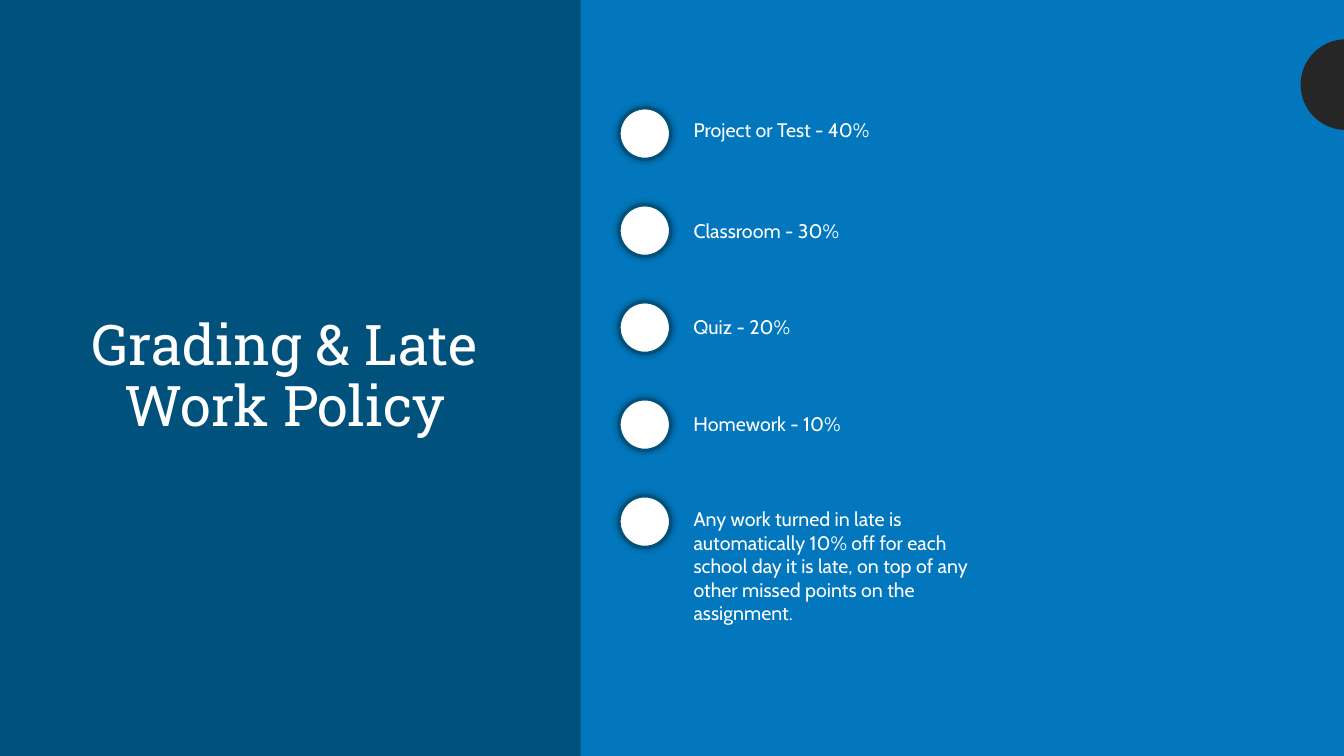
"""Build the grading and late work policy slide."""
from dataclasses import dataclass
from math import cos, pi, sin

from lxml import etree
from pptx import Presentation
from pptx.dml.color import RGBColor
from pptx.enum.shapes import MSO_SHAPE
from pptx.enum.text import MSO_ANCHOR, PP_ALIGN
from pptx.oxml.ns import qn
from pptx.util import Inches, Pt

RECT, OVAL = MSO_SHAPE.RECTANGLE, MSO_SHAPE.OVAL
TOP, MIDDLE = MSO_ANCHOR.TOP, MSO_ANCHOR.MIDDLE
LEFT, CENTER = PP_ALIGN.LEFT, PP_ALIGN.CENTER


@dataclass(frozen=True)
class Theme:
    navy: RGBColor = RGBColor.from_string("00517C")
    blue: RGBColor = RGBColor.from_string("0277BD")
    dark: RGBColor = RGBColor.from_string("262626")
    white: RGBColor = RGBColor.from_string("FFFFFF")
    title_font: str = "Roboto Slab"
    body_font: str = "Cabin"
    title_size: int = 40
    body_size: int = 14


THEME = Theme()
LATE_RULE = (
    "Any work turned in late is automatically 10% off for each school day "
    "it is late, on top of any other missed points on the assignment."
)
# Each row: text, offset of its box below the bullet's top, width, height
POLICIES = [
    ("Project or Test - 40%", 0, 4.48, 0.44),
    ("Classroom - 30%", 0.04, 4.19, 0.44),
    ("Quiz - 20%", 0.03, 4.43, 0.44),
    ("Homework - 10%", 0.03, 4.43, 0.44),
    (LATE_RULE, 0.01, 3.28, 1.38),
]


def set_attrs(obj, values):
    """Set each attribute of obj from a dict."""
    for name, value in values.items():
        setattr(obj, name, value)


def paint(sp, color):
    """Give a shape a plain fill without line or shadow."""
    sp.shadow.inherit = False
    sp.fill.solid()
    sp.fill.fore_color.rgb = color
    sp.line.fill.background()


def add_glow_shadow(sp):
    """Add a soft black shadow centred under a shape."""
    effects = sp._element.spPr.find(qn("a:effectLst"))
    shadow = etree.SubElement(effects, qn("a:outerShdw"), blurRad=str(Pt(5)),
                              dist="0", dir="0", algn="ctr", rotWithShape="0")
    color = etree.SubElement(shadow, qn("a:srgbClr"), val="000000")
    etree.SubElement(color, qn("a:alpha"), val="40000")


def add_text(slide, box, text, font, frame, para):
    """Add one wrapped paragraph in a text box."""
    tf = slide.shapes.add_textbox(*map(Inches, box)).text_frame
    set_attrs(tf, {"word_wrap": True, **frame})
    p = tf.paragraphs[0]
    set_attrs(p, para)
    r = p.add_run()
    r.text = text
    set_attrs(r.font, font)
    r.font.color.rgb = THEME.white


def add_backdrop(slide, box):
    """Fill the background and the blue panel in the given box."""
    slide.background.fill.solid()
    slide.background.fill.fore_color.rgb = THEME.navy
    paint(slide.shapes.add_shape(RECT, *map(Inches, box)), THEME.blue)


def add_half_disc(slide, box, steps=48):
    """Draw the left half of a disc that fills the box."""
    left, top, radius, height = box
    cx, cy = left + radius, top + height / 2
    angles = [pi / 2 + pi * i / steps for i in range(steps + 1)]
    points = [(Inches(cx + radius * cos(a)), Inches(cy + radius * sin(a)))
              for a in angles]
    builder = slide.shapes.build_freeform(*points[0])
    builder.add_line_segments(points[1:], close=True)
    paint(builder.convert_to_shape(), THEME.dark)


def add_title(slide, box, text):
    """Place the slide title centred in the box."""
    font = {"name": THEME.title_font, "size": Pt(THEME.title_size)}
    add_text(slide, box, text, font, {"vertical_anchor": MIDDLE},
             {"alignment": CENTER, "line_spacing": 0.9})


def add_policies(slide, box, rows, size=0.51, indent=0.64):
    """List the policies with round bullets spread over the box height."""
    left, top, _, height = box
    pitch = (height - size) / (len(rows) - 1)
    font = {"name": THEME.body_font, "size": Pt(THEME.body_size)}
    margins = ("margin_left", "margin_top", "margin_right", "margin_bottom")
    frame = {"vertical_anchor": TOP, **dict.fromkeys(margins, Inches(0.1))}
    for i, (text, offset, width, text_height) in enumerate(rows):
        y = top + i * pitch
        sp = slide.shapes.add_shape(OVAL, *map(Inches, (left, y, size, size)))
        paint(sp, THEME.white)
        sp.line.color.rgb = THEME.navy
        sp.line.width = Pt(2.25)
        add_glow_shadow(sp)
        add_text(slide, (left + indent, y + offset, width, text_height),
                 text, font, frame, {"alignment": LEFT})


def main():
    """Build and save the slide."""
    prs = Presentation()
    set_attrs(prs, {"slide_width": Inches(13.33), "slide_height": Inches(7.5)})
    slide = prs.slides.add_slide(prs.slide_layouts[6])
    add_backdrop(slide, (5.76, 0, 7.57, 7.5))
    add_half_disc(slide, (12.9, 0.39, 0.45, 0.9))
    add_title(slide, (0.73, 3.08, 4.19, 1.34), "Grading & Late Work Policy")
    add_policies(slide, (6.14, 1.07, 5.12, 4.36), POLICIES)
    prs.save("out.pptx")


if __name__ == "__main__":
    main()
